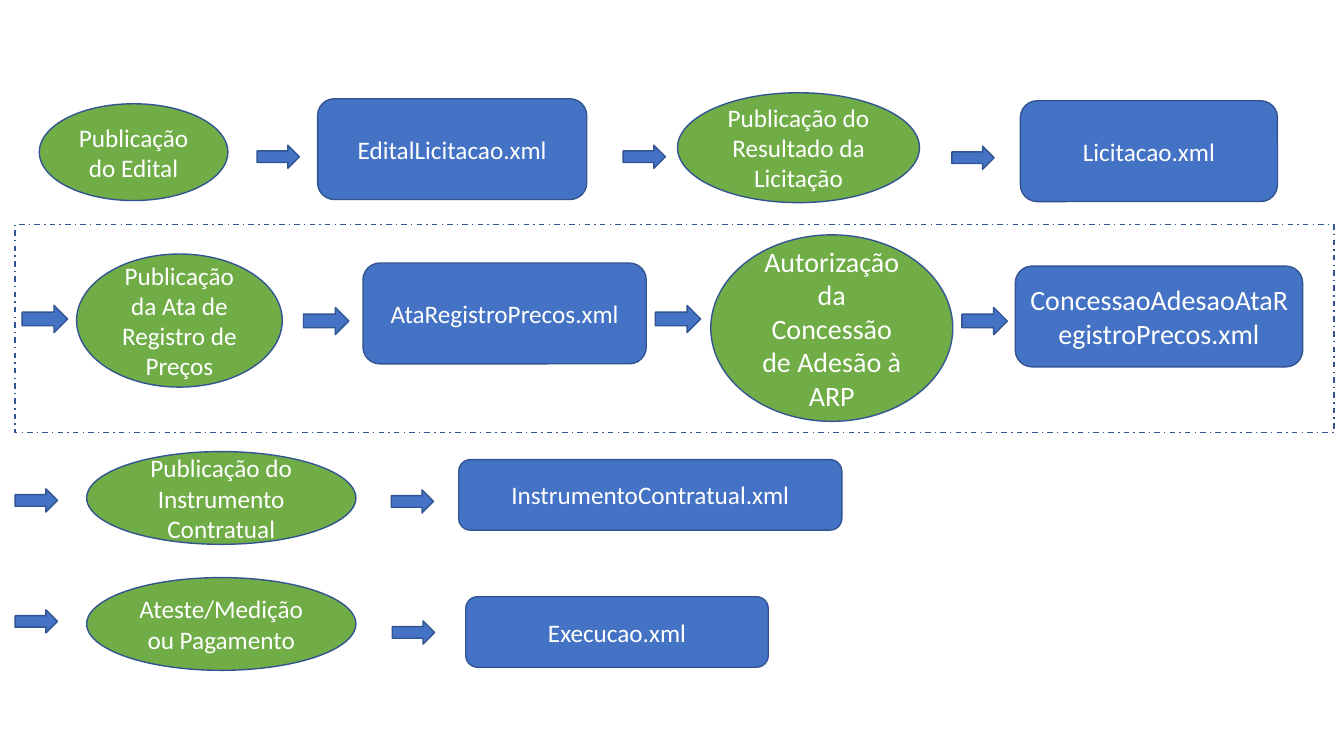
import pptx
import pptx.dml.color
import pptx.enum.dml
import pptx.enum.shapes
import pptx.enum.text
import pptx.util

PX = 9144  # EMU per px, at 100 px to the inch
COLORS = {"event": "70AD47", "file": "4472C4", "line": "325491", "text": "FFFFFF"}
SHAPE = pptx.enum.shapes.MSO_SHAPE

# Each step: text, left, top, width, height, font size
EVENTS = [
    ("Publicação do Edital", 39, 103, 187, 96, 18),
    ("Publicação do Resultado da Licitação", 672, 92, 240, 109, 18),
    ("Publicação da Ata de Registro de Preços", 76, 252, 204, 132, 18),
    ("Autorização da Concessão de Adesão à ARP", 705, 233, 240, 185, 20),
    ("Publicação do Instrumento Contratual", 86, 448, 267, 92, 18),
    ("Ateste/Medição ou Pagamento", 86, 573, 267, 92, 18),
]
FILES = [
    ("EditalLicitacao.xml", 315, 98, 267, 100, 18),
    ("Licitacao.xml", 1012, 100, 255, 100, 18),
    ("AtaRegistroPrecos.xml", 360, 261, 281, 100, 18),
    ("ConcessaoAdesaoAtaRegistroPrecos.xml", 1007, 264, 285, 100, 20),
    ("InstrumentoContratual.xml", 455, 456, 380, 70, 18),
    ("Execucao.xml", 462, 592, 300, 70, 18),
]
SMALL_ARROWS = [(255, 144), (618, 144), (944, 145),
                (15, 485), (388, 486), (15, 605), (389, 616)]
LARGE_ARROWS = [(22, 303), (301, 305), (650, 303), (954, 305)]


def rgb(name):
    return pptx.dml.color.RGBColor.from_string(COLORS[name])


def add_outlined(s, kind, box, fill=None):
    sp = s.shapes.add_shape(kind, *(v * PX for v in box))
    sp.shadow.inherit = False
    if fill:
        sp.fill.solid()
        sp.fill.fore_color.rgb = rgb(fill)
    else:
        sp.fill.background()
    sp.line.color.rgb = rgb("line")
    sp.line.width = pptx.util.Pt(1)
    return sp


def add_step(s, kind, fill, text, *box, size):
    sp = add_outlined(s, kind, box, fill)
    tf = sp.text_frame
    tf.word_wrap = True
    tf.vertical_anchor = pptx.enum.text.MSO_ANCHOR.MIDDLE
    p = tf.paragraphs[0]
    p.alignment = pptx.enum.text.PP_ALIGN.CENTER
    r = p.add_run()
    r.text = text
    for name, value in {"name": "Calibri", "size": pptx.util.Pt(size)}.items():
        setattr(r.font, name, value)
    r.font.color.rgb = rgb("text")


def add_arrows(s, corners, width, height):
    for left, top in corners:
        add_outlined(s, SHAPE.RIGHT_ARROW, (left, top, width, height), "file")


def add_frame(s, *box):
    sp = add_outlined(s, SHAPE.RECTANGLE, box)
    sp.line.dash_style = pptx.enum.dml.MSO_LINE.DASH_DOT


def main():
    prs = pptx.Presentation()
    prs.slide_width, prs.slide_height = 1333 * PX, 750 * PX
    s = prs.slides.add_slide(prs.slide_layouts[6])
    add_frame(s, 15, 223, 1308, 206)
    for kind, fill, steps in ((SHAPE.OVAL, "event", EVENTS),
                              (SHAPE.ROUNDED_RECTANGLE, "file", FILES)):
        for text, *box, size in steps:
            add_step(s, kind, fill, text, *box, size=size)
    add_arrows(s, SMALL_ARROWS, 42, 23)
    add_arrows(s, LARGE_ARROWS, 45, 27)
    prs.save("out.pptx")


if __name__ == "__main__":
    main()
